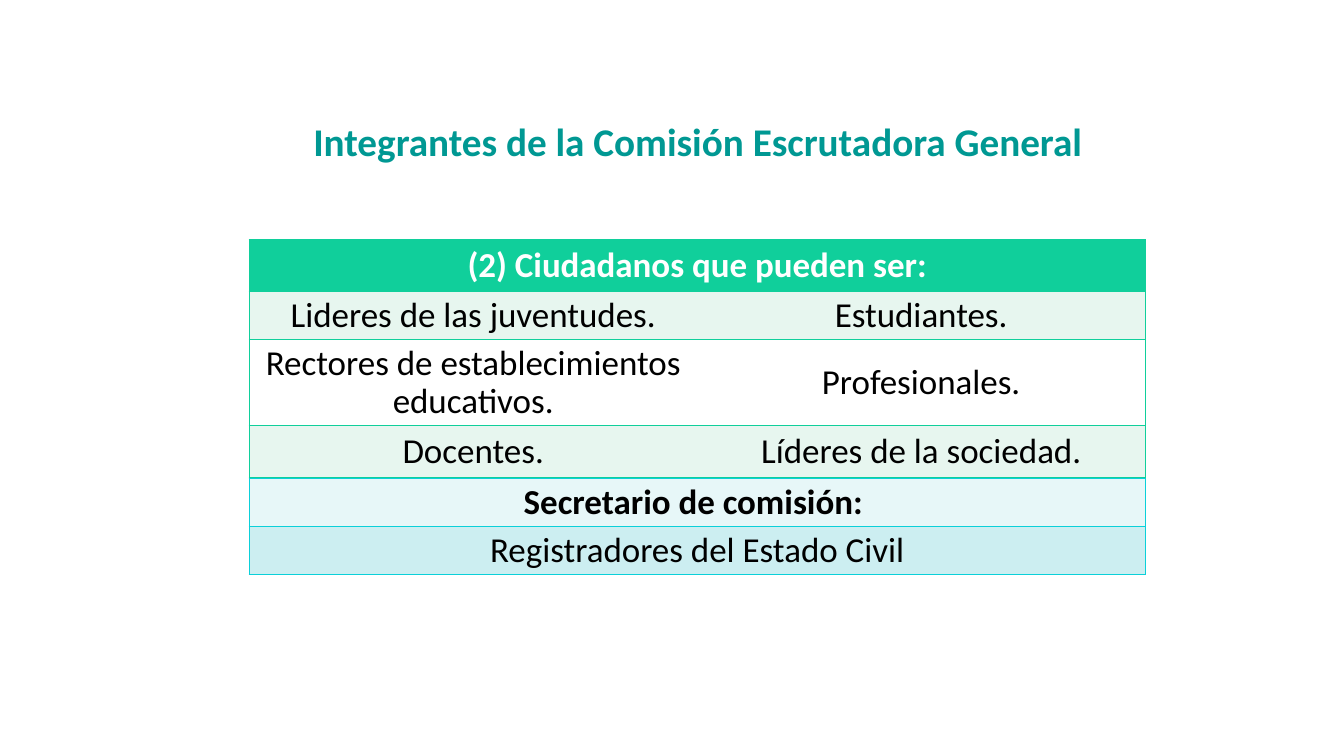
"""Build the slide on the members of the general scrutiny commission."""
from dataclasses import dataclass

from lxml.etree import SubElement
from pptx import Presentation
from pptx.dml.color import RGBColor as Color
from pptx.enum.text import MSO_ANCHOR as Anchor, PP_ALIGN as Align
from pptx.oxml.ns import qn
from pptx.util import Pt

WHITE = RGB_WHITE = Color(0xFF, 0xFF, 0xFF)
BLACK = Color(0, 0, 0)
TEAL = Color(0x00, 0x98, 0x93)
GREEN = Color(0x10, 0xCF, 0x9B)
CYAN = Color(0x0B, 0xD0, 0xD9)
MINT = Color(0xE7, 0xF6, 0xEF)
ICE = Color(0xE7, 0xF7, 0xF8)
SKY = Color(0xCC, 0xEE, 0xF1)

LEFT, WIDTH, ROW = 178, 640, 29.2


@dataclass
class Row:
    words: tuple[str, ...]
    fill: Color
    ink: Color = BLACK
    bold: bool = False
    space: float = 0.9
    anchor: Anchor = Anchor.MIDDLE


@dataclass
class Grid:
    top: float
    cols: int
    edge: Color
    rows: tuple[Row, ...]


GRIDS = (
    Grid(171.2, 2, GREEN, (
        Row(("(2) Ciudadanos que pueden ser:",), GREEN, WHITE, True, 1, Anchor.TOP),
        Row(("Lideres de las juventudes.", "Estudiantes."), MINT),
        Row(("Rectores de establecimientos educativos.", "Profesionales."), WHITE),
        Row(("Docentes.", "Líderes de la sociedad."), MINT, space=1),
    )),
    Grid(341.9, 1, CYAN, (
        Row(("Secretario de comisión: ",), ICE, bold=True, anchor=Anchor.TOP),
        Row(("Registradores del Estado Civil",), SKY, anchor=Anchor.TOP),
    )),
)


def put_text(frame, text: str, *, size: float = 25, ink: Color = BLACK,
             bold: bool = False, space: float = 1) -> None:
    """Write one centred line of formatted text."""
    para = frame.paragraphs[0]
    para.alignment = Align.CENTER
    para.line_spacing = space
    run = para.add_run()
    run.text = text
    font = run.font
    font.name, font.size, font.bold = "Calibri", Pt(size), bold
    font.color.rgb = ink


def set_edges(cell, edge: Color, sides: str) -> None:
    """Line the given sides of a cell and clear the others."""
    props = cell._tc.get_or_add_tcPr()
    for side in "LRTB":
        line = SubElement(props, qn(f"a:ln{side}"), w=str(Pt(1)))
        if side in sides:
            fill = SubElement(line, qn("a:solidFill"))
            SubElement(fill, qn("a:srgbClr"), val=str(edge))
        else:
            SubElement(line, qn("a:noFill"))


def draw_grid(slide, grid: Grid) -> None:
    """Draw one table, merging the rows that hold a single text."""
    count = len(grid.rows)
    table = slide.shapes.add_table(count, grid.cols, Pt(LEFT), Pt(grid.top),
                                   Pt(WIDTH), Pt(ROW * count)).table
    table.first_row = table.horz_banding = False
    last = grid.cols - 1
    for i, row in enumerate(grid.rows):
        if len(row.words) < grid.cols:
            table.cell(i, 0).merge(table.cell(i, last))
        for j in range(grid.cols):
            cell = table.cell(i, j)
            sides = "TB" + "L" * (j == 0) + "R" * (j + 1 >= len(row.words))
            set_edges(cell, grid.edge, sides)
            cell.fill.solid()
            cell.fill.fore_color.rgb = row.fill
            cell.vertical_anchor = row.anchor
            if j < len(row.words):
                put_text(cell.text_frame, row.words[j], ink=row.ink,
                         bold=row.bold, space=row.space)


def main() -> None:
    """Build and save the deck."""
    deck = Presentation()
    deck.slide_width, deck.slide_height = Pt(960), Pt(540)
    slide = deck.slides.add_slide(deck.slide_layouts[6])
    title = slide.shapes.add_textbox(Pt(203.8), Pt(80), Pt(589), Pt(41)).text_frame
    title.word_wrap = True
    put_text(title, "Integrantes de la Comisión Escrutadora General",
             size=28, ink=TEAL, bold=True)
    for grid in GRIDS:
        draw_grid(slide, grid)
    deck.save("out.pptx")


if __name__ == "__main__":
    main()
